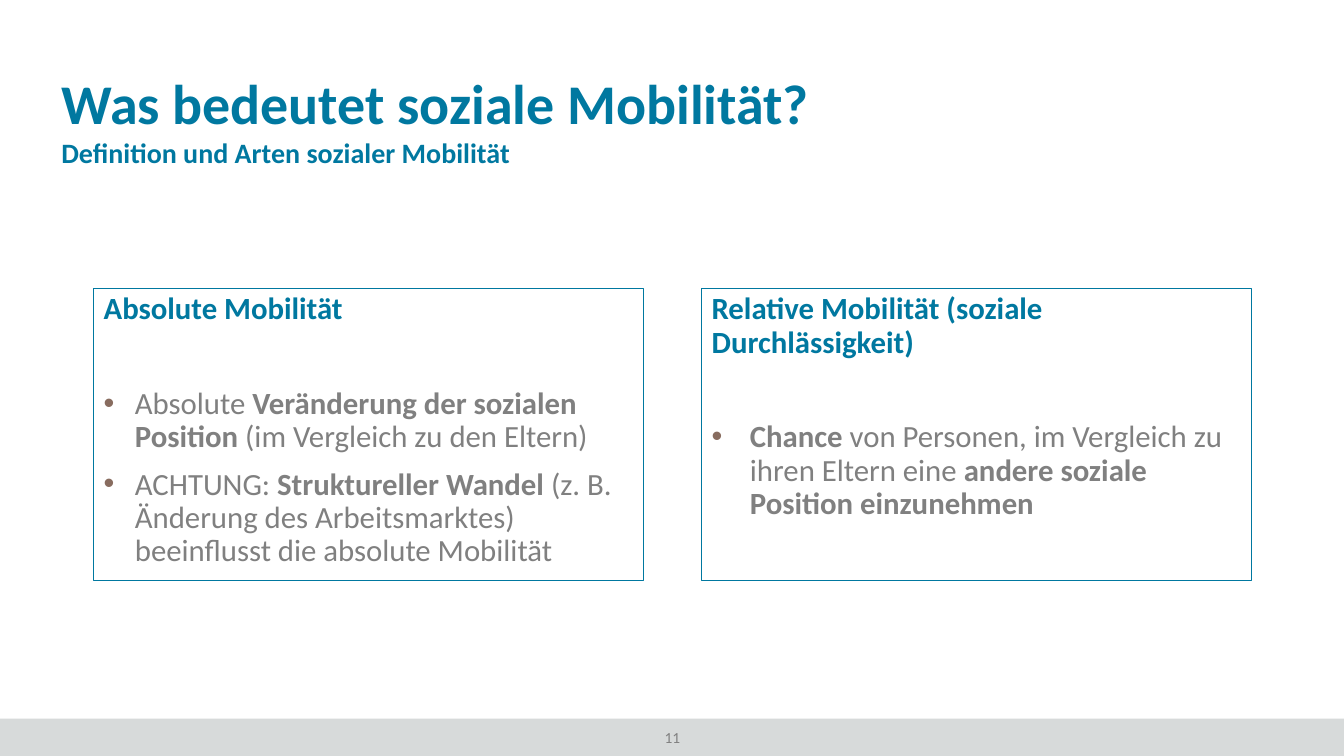
from pptx import Presentation
from pptx.dml.color import RGBColor
from pptx.enum.shapes import MSO_SHAPE as Shape
from pptx.enum.text import MSO_ANCHOR as Anchor, PP_ALIGN as Align
from pptx.oxml import parse_xml
from pptx.oxml.ns import nsdecls
from pptx.util import Inches, Pt

BLUE, GRAY, BROWN, BAND = "0078A0", "808080", "886C5F", "D7DADA"


def color(value):
    return RGBColor.from_string(value)


def style(para, size, value, bold=None):
    para.font.name = "Calibri"
    para.font.size = Pt(size)
    para.font.color.rgb = color(value)
    para.font.bold = bold


deck = Presentation()
deck.slide_width, deck.slide_height = Inches(13.33), Inches(7.5)
page = deck.slides.add_slide(deck.slide_layouts[6])

# Footer band
band = page.shapes.add_shape(Shape.RECTANGLE, 0, Inches(7.13), deck.slide_width, Inches(0.37))
band.shadow.inherit = False
band.fill.solid()
band.fill.fore_color.rgb = color(BAND)
band.line.fill.background()

# Title, subtitle and page number
labels = [
    ("Was bedeutet soziale Mobilität?", 0.51, 0.66, 12.31, 0.67, 0.1, 40, BLUE, True, Align.LEFT),
    ("Definition und Arten sozialer Mobilität", 0.51, 1.33, 12.31, 0.42, 0.05, 20, BLUE, True, Align.LEFT),
    ("11", 6.07, 7.17, 1.2, 0.29, 0.05, 11, GRAY, False, Align.CENTER),
]
for text, left, top, width, height, inset, size, value, bold, align in labels:
    box = page.shapes.add_textbox(Inches(left), Inches(top), Inches(width), Inches(height))
    frame = box.text_frame
    frame.word_wrap = True
    frame.margin_top = frame.margin_bottom = Inches(inset)
    para = frame.paragraphs[0]
    para.text = text
    para.alignment = align
    para.line_spacing = 0.9 if bold else 1.0
    style(para, size, value, bold)

# Definition boxes: left, heading, bullet indent, bullets as (text, bold) spans
definitions = [
    (0.93, "Absolute Mobilität", 0.31, [
        [("Absolute", False), (" Veränderung der sozialen Position ", True),
         ("(im Vergleich zu den Eltern)", False)],
        [("ACHTUNG: ", False), ("Struktureller Wandel ", True),
         ("(z. B. Änderung des Arbeitsmarktes) beeinflusst die absolute Mobilität", False)],
    ]),
    (6.96, "Relative Mobilität (soziale Durchlässigkeit)", 0.38, [
        [("Chance", True), (" von Personen, im Vergleich zu ihren Eltern eine ", False),
         ("andere soziale Position einzunehmen", True)],
    ]),
]
for left, heading, indent, bullets in definitions:
    box = page.shapes.add_shape(Shape.RECTANGLE, Inches(left), Inches(2.86), Inches(5.45), Inches(2.9))
    box.shadow.inherit = False
    box.fill.background()
    box.line.color.rgb = color(BLUE)
    box.line.width = Pt(0.75)
    frame = box.text_frame
    frame.word_wrap = True
    frame.vertical_anchor = Anchor.TOP
    para = frame.paragraphs[0]
    para.text = heading
    para.alignment = Align.LEFT
    para.line_spacing = 0.9
    style(para, 22, BLUE, True)

    for number, spans in enumerate(bullets):
        para = frame.add_paragraph()
        para.alignment = Align.LEFT
        para.line_spacing = 0.9
        # The first bullet stands one line further below the heading
        para.space_before = Pt(10 if number else 44)
        props = para._p.get_or_add_pPr()
        props.set("marL", str(Inches(indent)))
        props.set("indent", str(-Inches(indent)))
        props.append(parse_xml(f'<a:buClr {nsdecls("a")}><a:srgbClr val="{BROWN}"/></a:buClr>'))
        props.append(parse_xml(f'<a:buFont {nsdecls("a")} typeface="Arial"/>'))
        props.append(parse_xml(f'<a:buChar {nsdecls("a")} char="•"/>'))
        style(para, 22, GRAY)
        for text, bold in spans:
            span = para.add_run()
            span.text = text
            span.font.bold = bold

deck.save("out.pptx")
